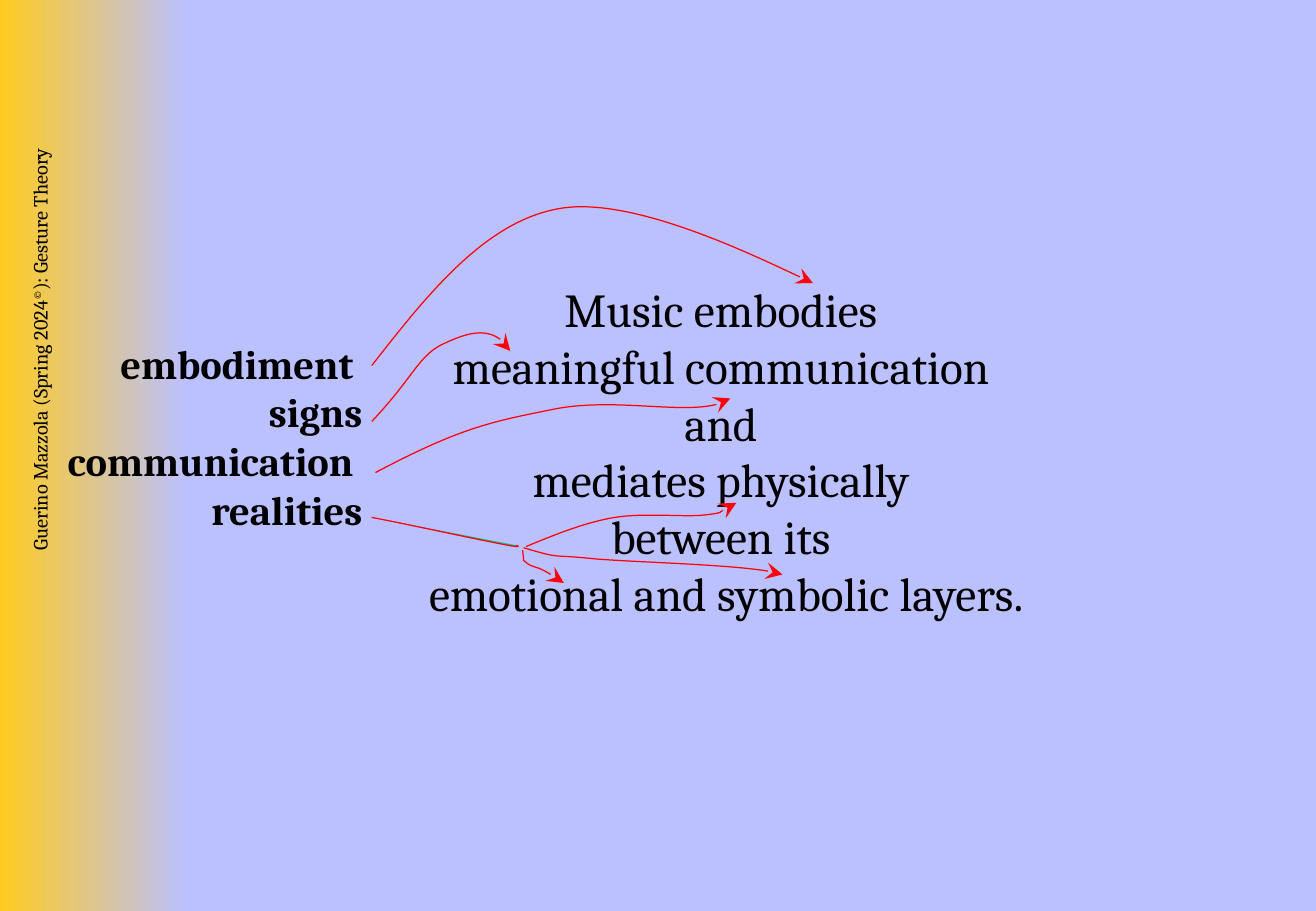
from dataclasses import dataclass

from lxml import etree
from pptx import Presentation
from pptx.dml.color import RGBColor
from pptx.enum.shapes import MSO_SHAPE
from pptx.enum.text import MSO_ANCHOR, PP_ALIGN
from pptx.oxml.ns import qn
from pptx.util import Pt

RECT = MSO_SHAPE.RECTANGLE
TOP = MSO_ANCHOR.TOP
RIGHT, CENTER = PP_ALIGN.RIGHT, PP_ALIGN.CENTER
PX = 9144


@dataclass(frozen=True)
class Theme:
    back: str = "BBC0FF"
    gold: str = "FFCB1F"
    ink: str = "000000"
    red: str = "FF020B"
    green: str = "00CC99"
    font: str = "Cambria"
    small: int = 12
    mid: int = 24
    large: int = 28
    line: float = 0.75


def color(code):
    return RGBColor.from_string(code)


def write(para, text, font, size, ink, bold=False, base=0):
    for i, part in enumerate(text.split("\n")):
        if i:
            para.add_line_break()
        run = para.add_run()
        run.text = part
        run.font.name = font
        run.font.size = Pt(size)
        run.font.bold = bold
        run.font.color.rgb = color(ink)
        if base:
            run.font._element.set("baseline", str(base * 1000))


class Page:
    def __init__(self, deck, theme):
        self.theme = theme
        self.slide = deck.slides.add_slide(deck.slide_layouts[6])
        fill = self.slide.background.fill
        fill.solid()
        fill.fore_color.rgb = color(theme.back)

    def band(self, *box):
        shape = self.slide.shapes.add_shape(RECT, *(n * PX for n in box))
        shape.shadow.inherit = False
        shape.line.fill.background()
        shape.fill.gradient()
        shape.fill.gradient_angle = 0
        ends = (0, self.theme.gold), (1, self.theme.back)
        for stop, (pos, code) in zip(shape.fill.gradient_stops, ends):
            stop.position = pos
            stop.color.rgb = color(code)

    def text(self, box, runs, size, align, turn=0, bold=False):
        shape = self.slide.shapes.add_textbox(*(n * PX for n in box))
        shape.rotation = turn
        frame = shape.text_frame
        frame.word_wrap = True
        frame.vertical_anchor = TOP
        para = frame.paragraphs[0]
        para.alignment = align
        for words, base in runs:
            write(para, words, font=self.theme.font, size=size,
                  ink=self.theme.ink, bold=bold, base=base)

    def curve(self, start, *points, fill=None, arrow=True):
        form = self.slide.shapes.build_freeform(*start, scale=PX)
        form.add_line_segments(points, close=False)
        shape = form.convert_to_shape()
        shape.shadow.inherit = False
        steps = list(shape.element.iter(qn("a:lnTo")))
        for first, *rest in zip(steps[::3], steps[1::3], steps[2::3]):
            first.tag = qn("a:cubicBezTo")
            for step in rest:
                first.append(step[0])
                step.getparent().remove(step)
        if fill:
            shape.fill.solid()
            shape.fill.fore_color.rgb = color(fill)
        else:
            shape.fill.background()
        shape.line.color.rgb = color(self.theme.red)
        shape.line.width = Pt(self.theme.line)
        if arrow:
            line = shape.line._get_or_add_ln()
            etree.SubElement(line, qn("a:tailEnd"),
                             type="stealth", w="lg", len="lg")


def main():
    deck = Presentation()
    deck.slide_width, deck.slide_height = 1083 * PX, 750 * PX
    theme = Theme()
    page = Page(deck, theme)

    page.band(0, 0, 154, 750)
    page.text((-240, 366, 565, 50),
              [("Guerino Mazzola (Spring 2024", 0), ("©", 30),
               ("): Gesture Theory ", 0)],
              theme.small, RIGHT, turn=270)
    page.text((292, 226, 611, 304),
              [("Music embodies \nmeaningful communication \nand \n"
                "mediates physically \nbetween its \n"
                "emotional and symbolic layers.", 0)],
              theme.large, CENTER)
    page.text((44, 274, 264, 172),
              [("embodiment \nsigns communication \nrealities", 0)],
              theme.mid, RIGHT, bold=True)

    page.curve((306, 301), (352, 242), (399, 183), (459, 172),
               (519, 160), (669, 233), (669, 233))
    page.curve((306, 347), (340, 311), (344, 294), (363, 284),
               (382, 275), (407, 266), (420, 289))
    page.curve((309, 389), (381, 351), (406, 347), (455, 337),
               (504, 327), (577, 345), (601, 328))
    page.curve((306, 426), (342, 433), (377, 441), (413, 448),
               (433, 452), (425, 449), (425, 449),
               fill=theme.green, arrow=False)
    page.curve((433, 450), (457, 440), (482, 430), (506, 426),
               (531, 422), (564, 426), (580, 424),
               (597, 422), (606, 414), (606, 414))
    page.curve((431, 451), (465, 461), (452, 456), (488, 460),
               (523, 463), (622, 465), (644, 473))
    page.curve((430, 453), (432, 466), (429, 459), (434, 464),
               (440, 468), (441, 464), (464, 480))
    deck.save("out.pptx")


if __name__ == "__main__":
    main()
